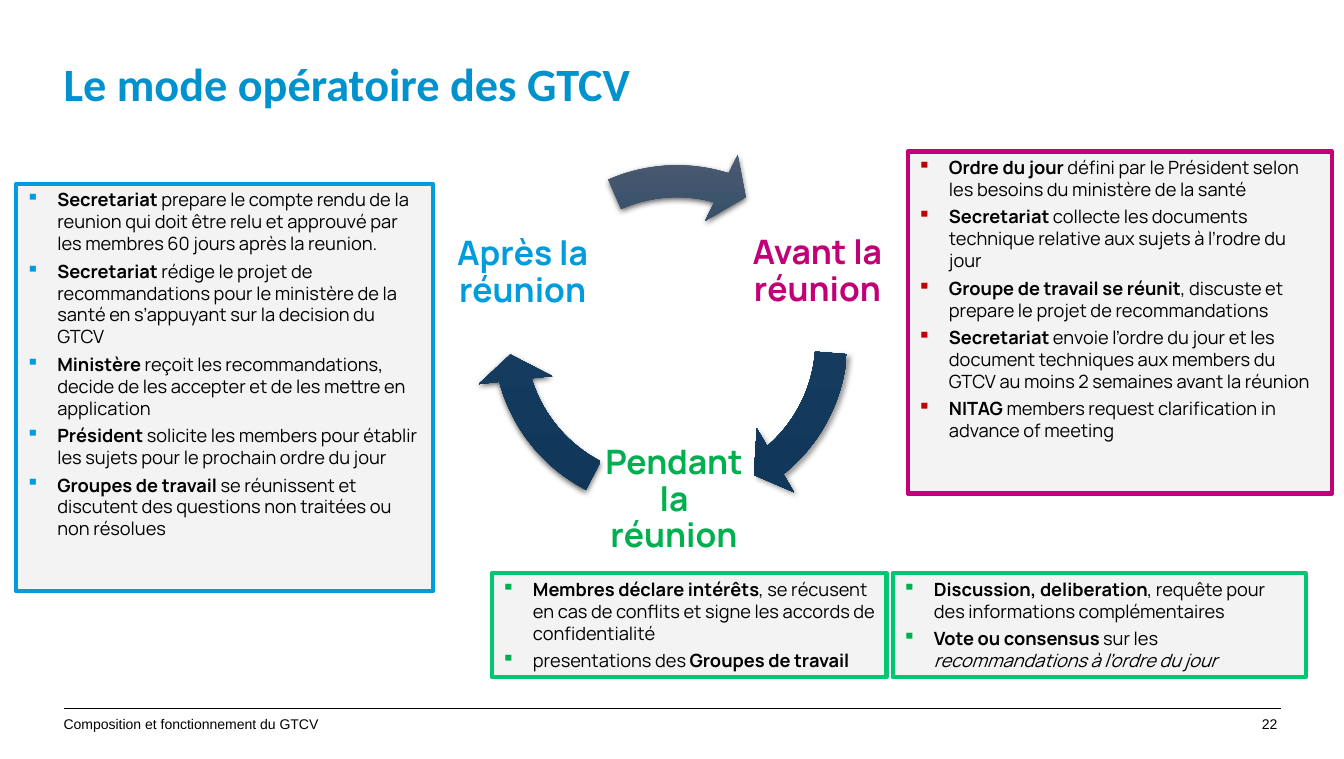
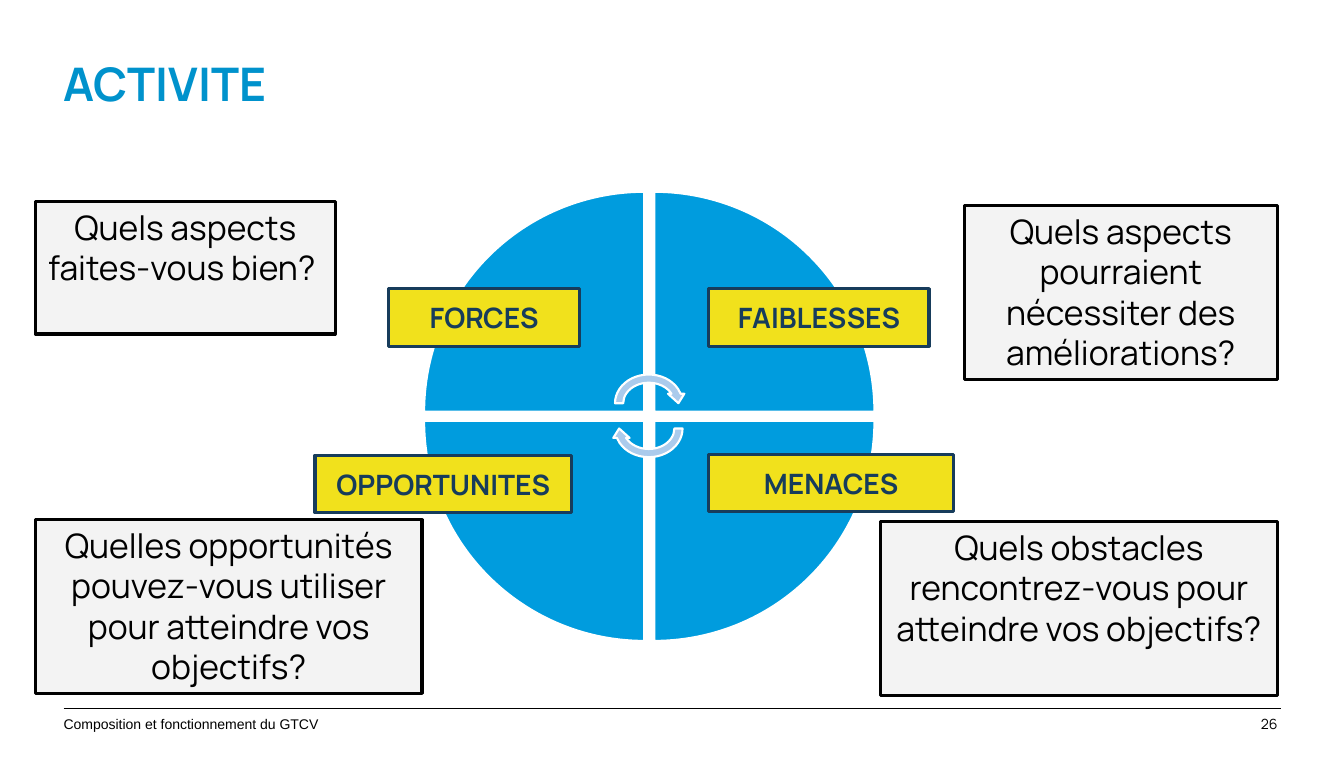
"""Build two slides: the GTCV operating cycle and a SWOT activity."""
from pptx import Presentation, util as u
from pptx.dml.color import RGBColor
from pptx.enum import shapes, text
from pptx.oxml import parse_xml
from pptx.oxml.ns import nsdecls

HUES = {
    "title": "0092CC", "blue": "009CDE", "pink": "C10077", "red": "C00000",
    "green": "00B050", "mint": "00C871", "gray": "F3F3F3", "black": "000000",
    "white": "FFFFFF", "yellow": "F1E11C", "navy": "173C5B", "pale": "ABCBEC",
    "slate": "4D5C72", "mid": "153C5F", "deep": "0F3658",
}
KINDS = shapes.MSO_SHAPE
TOP, MID = text.MSO_ANCHOR.TOP, text.MSO_ANCHOR.MIDDLE
LEFT, CENTER, RIGHT = text.PP_ALIGN.LEFT, text.PP_ALIGN.CENTER, text.PP_ALIGN.RIGHT
FLUSH = {"margin_left": 0, "margin_right": 0, "margin_top": 0, "margin_bottom": 0}


def draw(page, kind, at, fill=None, line=None, width=1.5, turn=0):
    """Add a preset shape, or a text box when kind is None."""
    spot = [u.Inches(n) for n in at]
    if kind is None:
        return page.shapes.add_textbox(*spot)
    item = page.shapes.add_shape(kind, *spot)
    item.shadow.inherit = False
    item.rotation = turn
    if fill:
        item.fill.solid()
        item.fill.fore_color.rgb = RGBColor.from_string(HUES[fill])
    if line:
        item.line.color.rgb = RGBColor.from_string(HUES[line])
        item.line.width = u.Pt(width)
    else:
        item.line.fill.background()
    return item


def write(item, lines, size, hue="black", face="Manrope", bold=False,
          align=LEFT, anchor=TOP, space=1.0, bullet=None, frame=None):
    """Fill a shape with paragraphs; *bold* and _italic_ mark runs."""
    body = item.text_frame
    looks = {"word_wrap": True, "vertical_anchor": anchor, **(frame or {})}
    for key, value in looks.items():
        setattr(body, key, value)
    for row, line in enumerate(lines):
        para = body.add_paragraph() if row else body.paragraphs[0]
        if bullet:
            props = para._p.get_or_add_pPr()
            props.set("marL", str(u.Inches(0.31)))
            props.set("indent", str(u.Inches(-0.31)))
            for mark in (f'<a:buClr {nsdecls("a")}><a:srgbClr val="{HUES[bullet]}"/></a:buClr>',
                         f'<a:buChar {nsdecls("a")} char="▪"/>'):
                props.append(parse_xml(mark))
            if row:
                para.space_before = u.Pt(4)
        para.alignment = align
        para.line_spacing = space
        for odd, part in enumerate(line.split("*")):
            for slant, bit in enumerate(part.split("_")):
                if not bit:
                    continue
                run = para.add_run()
                run.text = bit
                font = {"name": face, "size": u.Pt(size),
                        "bold": bold or odd % 2 == 1, "italic": slant % 2 == 1}
                for key, value in font.items():
                    setattr(run.font, key, value)
                run.font.color.rgb = RGBColor.from_string(HUES[hue])


deck = Presentation()
deck.slide_width, deck.slide_height = u.Inches(13.31), u.Inches(7.52)
pages = []
for title, face, number, digits in (
        ("Le mode opératoire des GTCV", "Calibri", "22", "Arial"),
        ("ACTIVITE", "Manrope", "26", "Manrope")):
    page = deck.slides.add_slide(deck.slide_layouts[6])
    pages.append(page)
    rule = page.shapes.add_connector(
        shapes.MSO_CONNECTOR.STRAIGHT, *[u.Inches(n) for n in (0.63, 7.02, 12.69, 7.02)])
    rule.line.color.rgb = RGBColor.from_string(HUES["black"])
    rule.line.width = u.Pt(0.75)
    rule._element.spPr.append(parse_xml(f'<a:effectLst {nsdecls("a")}/>'))
    write(draw(page, None, (0.63, 0.6, 12.02, 0.52)), [title], 33, "title", face, True,
          space=0.9, frame={**FLUSH, "margin_top": u.Inches(0.01)})
    write(draw(page, None, (0.63, 7.09, 8.27, 0.12)),
          ["Composition et fonctionnement du GTCV"], 10, face="Arial", frame=FLUSH)
    write(draw(page, None, (11.67, 7.09, 0.98, 0.12)), [number], 10, face=digits,
          align=RIGHT, frame=FLUSH)
cycle, swot = pages

stops = "".join(f'<a:gs pos="{pos}"><a:srgbClr val="{HUES[hue]}"/></a:gs>'
                for pos, hue in ((0, "slate"), (50000, "mid"), (100000, "deep")))
blend = (f'<a:gradFill {nsdecls("a")} rotWithShape="1"><a:gsLst>{stops}</a:gsLst>'
         '<a:lin ang="5400000" scaled="0"/></a:gradFill>')
steps = (
    ("Avant la réunion", "pink", (7.29, 1.89), (4.79, 1.47), (30.18, 2.72), (40, 4, 3, 45)),
    ("Pendant la réunion", "green", (5.87, 4.15), (4.68, 1.44), (98.48, 70.46), (63, 4.5, 1.5, 90)),
    ("Après la réunion", "blue", (4.37, 1.9), (4.8, 1.43), (171.96, 147.82), (63, 4.5, 1.5, 90)),
)
pad = dict.fromkeys(FLUSH, u.Inches(0.03))
for label, hue, spot, ring, (end, start), (alpha, blur, dist, angle) in steps:
    write(draw(cycle, None, (*spot, 1.61, 1.61)), [label], 24, hue, bold=True,
          align=CENTER, anchor=MID, space=0.9, frame=pad)
    arrow = draw(cycle, KINDS.CIRCULAR_ARROW, (*ring, 3.81, 3.81))
    for spot, value in enumerate((0.083, 5.762, end, start, 0.096)):
        arrow.adjustments[spot] = value
    props = arrow._element.spPr
    props.prstGeom.addnext(parse_xml(blend))
    props.remove(props.find("{*}effectLst"))
    props.append(parse_xml(
        f'<a:effectLst {nsdecls("a")}><a:outerShdw blurRad="{u.Pt(blur)}" dist="{u.Pt(dist)}" '
        f'dir="{angle * 60000}" rotWithShape="0"><a:srgbClr val="{HUES["black"]}">'
        f'<a:alpha val="{alpha * 1000}"/></a:srgbClr></a:outerShdw></a:effectLst>'))

notes = (
    ((0.16, 1.82, 4.13, 4.04), "blue", "blue", (
        "*Secretariat* prepare le compte rendu de la reunion qui doit être relu et approuvé par les membres 60 jours après la reunion.",
        "*Secretariat* rédige le projet de recommandations pour le ministère de la santé en s’appuyant sur la decision du GTCV",
        "*Ministère* reçoit les recommandations, decide de les accepter et de les mettre en application",
        "*Président* solicite les members pour établir les sujets pour le prochain ordre du jour",
        "*Groupes de travail* se réunissent et discutent des questions non traitées ou non résolues")),
    ((8.99, 1.5, 4.2, 3.39), "pink", "red", (
        "*Ordre du jour* défini par le Président selon les besoins du ministère de la santé",
        "*Secretariat* collecte les documents technique relative aux sujets à l’rodre du jour",
        "*Groupe de travail se réunit*, discuste et prepare le projet de recommandations",
        "*Secretariat* envoie l’ordre du jour et les document techniques aux members du GTCV au moins 2 semaines avant la réunion",
        "*NITAG* members request clarification in advance of meeting")),
    ((4.87, 5.68, 3.91, 1.03), "mint", "green", (
        "*Membres déclare intérêts*, se récusent en cas de conflits et signe les accords de confidentialité",
        "presentations des *Groupes de travail*")),
    ((8.84, 5.68, 4.09, 1.03), "mint", "green", (
        "*Discussion, deliberation*, requête pour des informations complémentaires",
        "*Vote ou consensus* sur les _recommandations à l’ordre du jour_")),
)
for at, edge, dot, lines in notes:
    write(draw(cycle, KINDS.RECTANGLE, at, "gray", edge, 3), lines, 13, bullet=dot)

for turn, (col, row) in enumerate(((0, 0), (1, 0), (1, 1), (0, 1))):
    draw(swot, KINDS.PIE_WEDGE, (4.2 + 2.28 * col, 1.9 + 2.27 * row, 2.18, 2.18),
         "blue", "white", turn=90 * turn)
for top, turn in ((3.67, 0), (3.92, 180)):
    draw(swot, KINDS.CIRCULAR_ARROW, (6.05, top, 0.75, 0.65), "pale", "white", turn=turn)

parts = (
    ("FAIBLESSES", (7.02, 2.86, 2.18, 0.57),
     "Quels aspects pourraient nécessiter des améliorations?", (9.55, 2.04, 3.1, 1.72)),
    ("FORCES", (3.85, 2.86, 1.89, 0.57),
     "Quels aspects faites-vous bien? ", (0.35, 2, 2.97, 1.31)),
    ("OPPORTUNITES", (3.12, 4.51, 2.54, 0.57),
     "Quelles opportunités pouvez-vous utiliser pour atteindre vos objectifs?",
     (0.35, 5.15, 3.83, 1.72)),
    ("MENACES", (7.02, 4.5, 2.42, 0.57),
     "Quels obstacles rencontrez-vous pour atteindre vos objectifs?", (8.72, 5.17, 3.93, 1.72)),
)
for label, tag, ask, at in parts:
    write(draw(swot, KINDS.RECTANGLE, tag, "yellow", "navy", 2.25), [label], 20, "navy",
          bold=True, align=CENTER, anchor=MID)
    write(draw(swot, KINDS.RECTANGLE, at, "gray", "black", 2.25), [ask], 24, align=CENTER)

deck.save("out.pptx")
